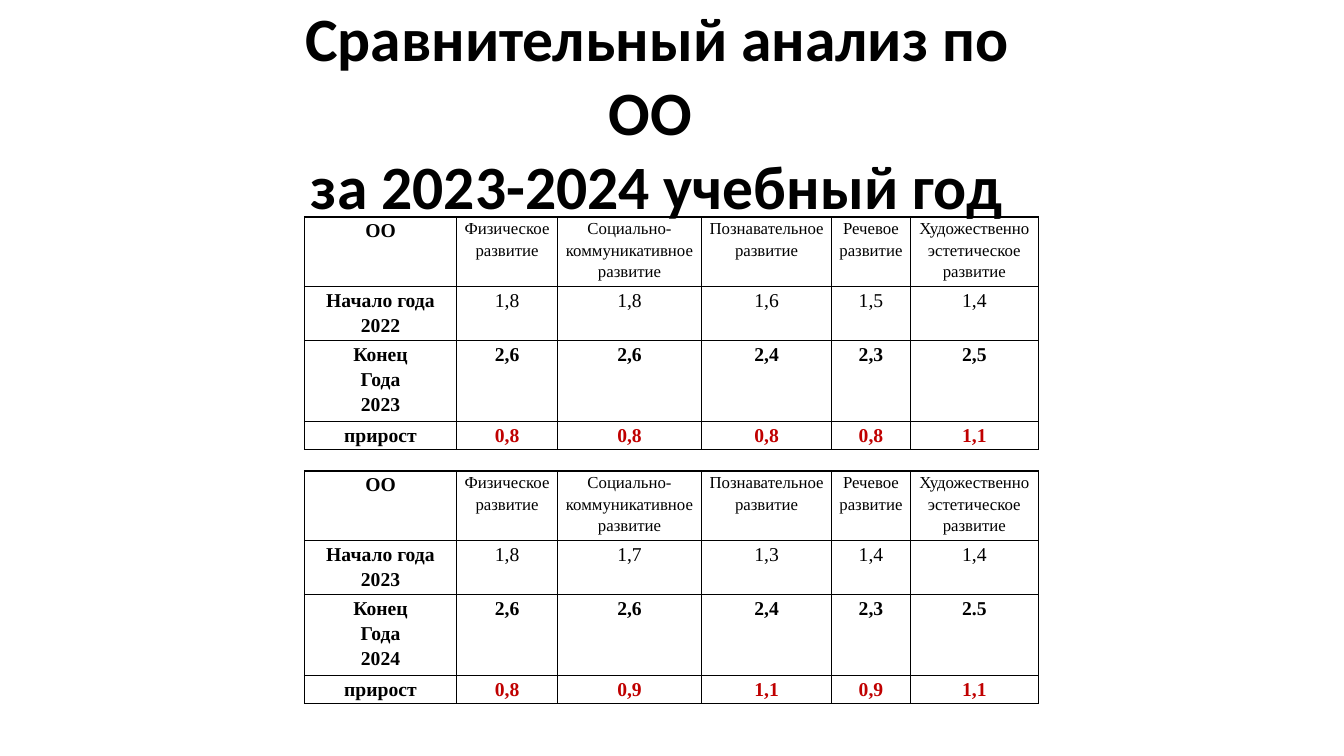
from lxml.etree import SubElement
from pptx import Presentation
from pptx.dml.color import RGBColor
from pptx.enum.text import MSO_ANCHOR as ANCHOR, PP_ALIGN as ALIGN
from pptx.oxml.ns import qn
from pptx.util import Cm, Pt

COLORS = {"text": "000000", "growth": "C00000", "border": "000000"}
COLUMN_WIDTHS = [3.84, 2.54, 3.63, 3.28, 1.98, 3.23]
ROW_HEIGHTS = [1.74, 1.36, 2.03, 0.69]
HEADER = ["ОО", "Физическое развитие", "Социально-коммуникативное развитие",
          "Познавательное развитие", "Речевое развитие ",
          "Художественно эстетическое развитие"]


def set_font(p, name, size, bold, color="text"):
    p.alignment = ALIGN.CENTER
    p.font.name = name
    p.font.size = Pt(size)
    p.font.bold = bold
    p.font.color.rgb = RGBColor.from_string(COLORS[color])


def add_title(slide, text):
    sp = slide.shapes.add_textbox(Cm(6.48), Cm(0.69), Cm(20.17), Cm(4.78))
    tf = sp.text_frame
    tf.word_wrap = True
    tf.vertical_anchor = ANCHOR.MIDDLE
    tf.margin_top, tf.margin_bottom = Cm(0.13), Cm(0.69)
    p = tf.paragraphs[0]
    p.text = text
    set_font(p, "Calibri", 44, True)


def add_borders(cell):
    tc_pr = cell._tc.get_or_add_tcPr()
    for side in ("a:lnL", "a:lnR", "a:lnT", "a:lnB"):
        ln = SubElement(tc_pr, qn(side), w=str(Pt(1)))
        fill = SubElement(ln, qn("a:solidFill"))
        SubElement(fill, qn("a:srgbClr"), val=COLORS["border"])


def fill_cell(cell, text, size, bold, color):
    cell.margin_left = cell.margin_right = Cm(0.18)
    cell.margin_top = cell.margin_bottom = 0
    cell.text = text
    for p in cell.text_frame.paragraphs:
        p.line_spacing = 1.15
        set_font(p, "Times New Roman", size, bold, color)
    add_borders(cell)
    cell.fill.background()


def add_results(slide, top, rows):
    frame = slide.shapes.add_table(
        len(ROW_HEIGHTS), len(COLUMN_WIDTHS), Cm(7.67), Cm(top),
        Cm(sum(COLUMN_WIDTHS)), Cm(sum(ROW_HEIGHTS)))
    table = frame.table
    table.first_row = table.horz_banding = False
    for column, width in zip(table.columns, COLUMN_WIDTHS):
        column.width = Cm(width)
    for row, height in zip(table.rows, ROW_HEIGHTS):
        row.height = Cm(height)

    # Row labels, year-end results and growth are bold
    for i, values in enumerate([HEADER] + rows):
        for j, text in enumerate(values):
            size = 12 if i == 0 and j > 0 else 14
            color = "growth" if i == 3 and j > 0 else "text"
            fill_cell(table.cell(i, j), text, size, j == 0 or i >= 2, color)


def main():
    prs = Presentation()
    prs.slide_width, prs.slide_height = Cm(33.87), Cm(19.05)
    slide = prs.slides.add_slide(prs.slide_layouts[6])

    # Heading
    add_title(slide, "Сравнительный анализ по ОО \nза 2023-2024 учебный год")

    # Results of the first year
    add_results(slide, 5.47, [
        ["Начало года\n2022", "1,8", "1,8", "1,6", "1,5", "1,4"],
        ["Конец\nГода\n2023", "2,6", "2,6", "2,4", "2,3", "2,5"],
        ["прирост", "0,8", "0,8", "0,8", "0,8", "1,1"],
    ])

    # Results of the second year
    add_results(slide, 11.87, [
        ["Начало года\n2023", "1,8", "1,7", "1,3", "1,4", "1,4"],
        ["Конец\nГода\n2024", "2,6", "2,6", "2,4", "2,3", "2.5"],
        ["прирост", "0,8", "0,9", "1,1", "0,9", "1,1"],
    ])
    prs.save("out.pptx")


if __name__ == "__main__":
    main()
